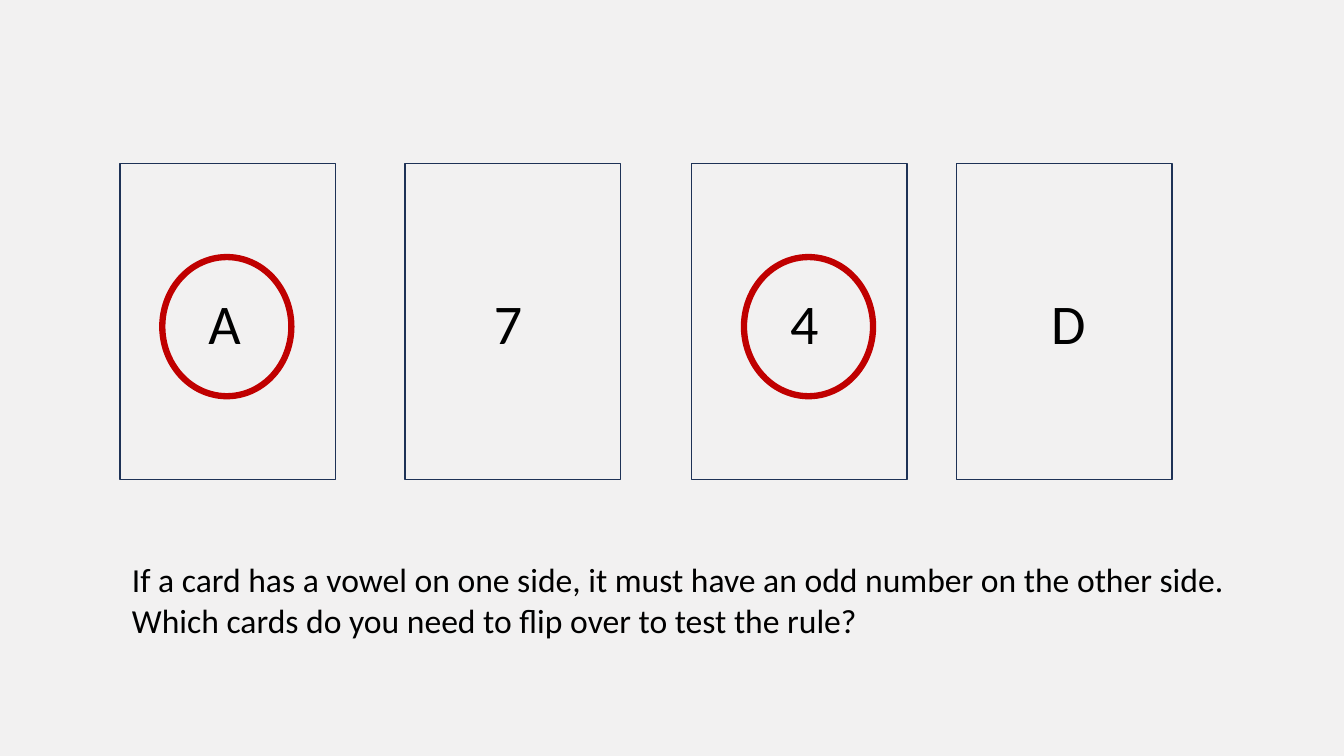
from pptx import Presentation
from pptx.dml.color import RGBColor
from pptx.enum.shapes import MSO_SHAPE as Preset
from pptx.enum.text import MSO_AUTO_SIZE as AutoSize
from pptx.util import Pt

COLORS = {"background": "F2F1F1", "card": "1E3256", "ring": "C00000", "text": "000000"}
CARDS = [
    ("A", 85.7, 141.8),
    ("7", 289.4, 345.6),
    ("4", 493.9, 557.3),
    ("D", 683.3, 743.8),
]
RING_LEFTS = [115.9, 531.4]
RULE = ("If a card has a vowel on one side, it must have an odd number on the other side. "
        "Which cards do you need to flip over to test the rule?")


def color(name):
    """Return a named colour of the slide."""
    return RGBColor.from_string(COLORS[name])


def add_outline(slide, preset, left, top, width, height, *, line, weight):
    """Draw an unfilled preset shape with a coloured line."""
    outline = slide.shapes.add_shape(preset, Pt(left), Pt(top), Pt(width), Pt(height))
    outline.shadow.inherit = False
    outline.fill.background()
    outline.line.color.rgb = color(line)
    outline.line.width = Pt(weight)


def add_text(slide, text, left, top, width, height, *, size, font="Calibri", ink="text"):
    """Add a wrapped text box in one format."""
    frame = slide.shapes.add_textbox(Pt(left), Pt(top), Pt(width), Pt(height)).text_frame
    frame.word_wrap = True
    frame.auto_size = AutoSize.SHAPE_TO_FIT_TEXT
    run = frame.paragraphs[0].add_run()
    run.text = text
    run.font.name = font
    run.font.size = Pt(size)
    run.font.color.rgb = color(ink)


def main():
    """Build the slide with four cards and the rule to test."""
    deck = Presentation()
    deck.slide_width, deck.slide_height = Pt(960), Pt(540)
    slide = deck.slides.add_slide(deck.slide_layouts[6])
    slide.background.fill.solid()
    slide.background.fill.fore_color.rgb = color("background")

    for face, card_left, face_left in CARDS:
        add_outline(slide, Preset.RECTANGLE, card_left, 116.6, 154, 226, line="card", weight=1)
        add_text(slide, face, face_left, 202.3, 65.5, 55.4, size=40)
    add_text(slide, RULE, 87.1, 396, 812.9, 65.5, size=24)
    for ring_left in RING_LEFTS:
        add_outline(slide, Preset.OVAL, ring_left, 183.6, 92.2, 99.4, line="ring", weight=4.5)

    deck.save("out.pptx")


if __name__ == "__main__":
    main()
